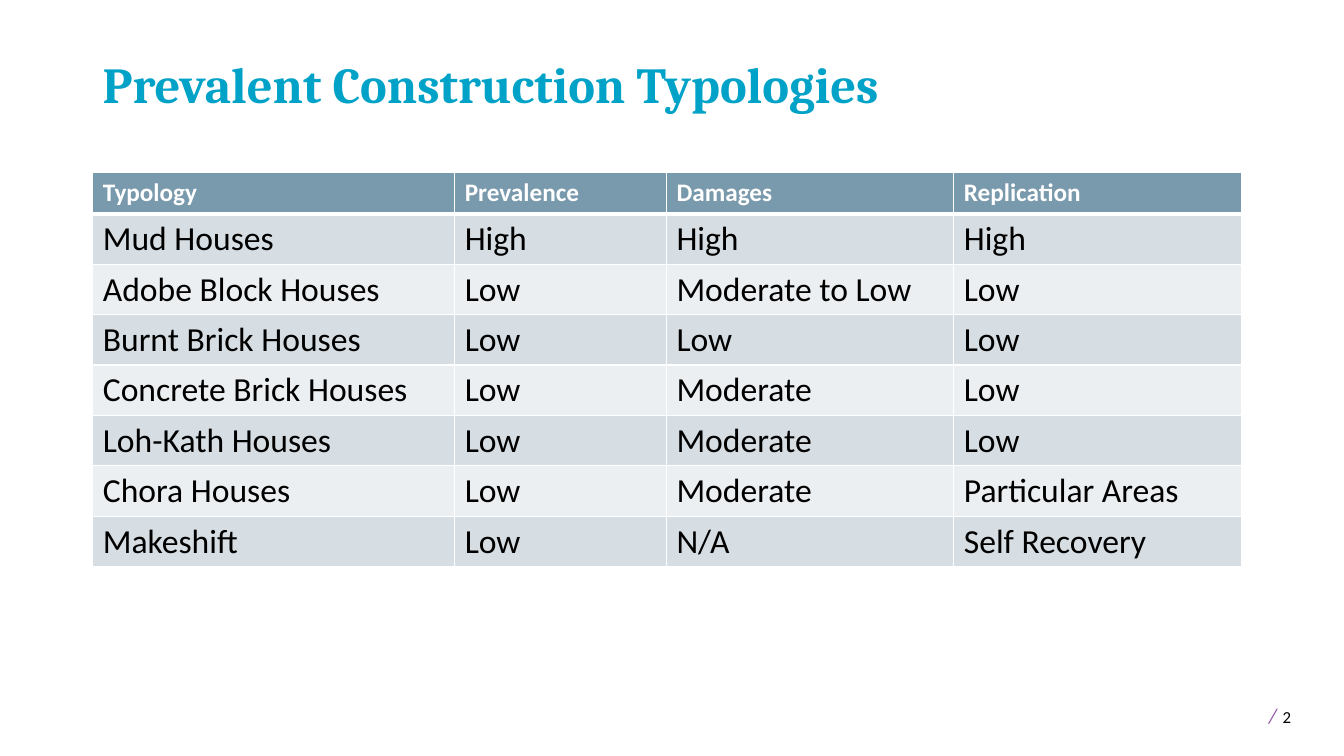
from lxml import etree
from pptx import Presentation
from pptx.dml.color import RGBColor
from pptx.enum.text import MSO_ANCHOR as Anchor
from pptx.oxml.ns import qn
from pptx.util import Inches, Pt

HEADER_FILL = "7999AC"
BAND_FILLS = ("D7DEE3", "ECEFF1")
COLUMN_WIDTHS = (3.59, 2.1, 2.85, 2.85)
HEADER_HEIGHT, BODY_HEIGHT = 0.41, 0.5

TYPOLOGIES = (
    ("Typology", "Prevalence", "Damages", "Replication"),
    ("Mud Houses", "High", "High", "High"),
    ("Adobe Block Houses", "Low", "Moderate to Low", "Low"),
    ("Burnt Brick Houses", "Low", "Low", "Low"),
    ("Concrete Brick Houses", "Low", "Moderate", "Low"),
    ("Loh-Kath Houses", "Low", "Moderate", "Low"),
    ("Chora Houses", "Low", "Moderate", "Particular Areas"),
    ("Makeshift", "Low", "N/A", "Self Recovery"),
)


def rgb(color):
    return RGBColor.from_string(color)


def add_run(p, text, size, color="000000", font="Calibri", bold=False, italic=False):
    r = p.add_run()
    r.text = text
    r.font.size = Pt(size)
    r.font.name = font
    r.font.bold = bold
    r.font.italic = italic
    r.font.color.rgb = rgb(color)


def add_text_box(s, left, top, width, height, anchor=Anchor.TOP):
    """Add a wrapping text box and return its first paragraph."""
    box = s.shapes.add_textbox(Inches(left), Inches(top), Inches(width), Inches(height))
    tf = box.text_frame
    tf.word_wrap = True
    tf.vertical_anchor = anchor
    return tf.paragraphs[0]


def set_borders(cell, top, bottom):
    """Draw white borders; they must precede the fill in the cell properties."""
    props = cell._tc.get_or_add_tcPr()
    widths = {"a:lnL": 1, "a:lnR": 1, "a:lnT": top, "a:lnB": bottom}
    for tag, width in widths.items():
        line = etree.SubElement(props, qn(tag), w=str(Pt(width)))
        fill = etree.SubElement(line, qn("a:solidFill"))
        etree.SubElement(fill, qn("a:srgbClr"), val="FFFFFF")


def fill_cell(cell, text, row):
    is_header = row == 0
    set_borders(cell, top=3 if row == 1 else 1, bottom=3 if is_header else 1)
    cell.fill.solid()
    cell.fill.fore_color.rgb = rgb(HEADER_FILL if is_header else BAND_FILLS[(row - 1) % 2])
    p = cell.text_frame.paragraphs[0]
    if is_header:
        add_run(p, text, 18, "FFFFFF", bold=True)
    else:
        add_run(p, text, 24)


def add_typology_table(s, left, top):
    height = HEADER_HEIGHT + BODY_HEIGHT * (len(TYPOLOGIES) - 1)
    table = s.shapes.add_table(
        len(TYPOLOGIES), len(COLUMN_WIDTHS), Inches(left), Inches(top),
        Inches(sum(COLUMN_WIDTHS)), Inches(height)).table
    for column, width in zip(table.columns, COLUMN_WIDTHS):
        column.width = Inches(width)
    for i, values in enumerate(TYPOLOGIES):
        table.rows[i].height = Inches(BODY_HEIGHT if i else HEADER_HEIGHT)
        for j, text in enumerate(values):
            fill_cell(table.cell(i, j), text, i)


def main():
    prs = Presentation()
    prs.slide_width, prs.slide_height = Inches(13.33), Inches(7.5)
    s = prs.slides.add_slide(prs.slide_layouts[6])

    # Page number
    p = add_text_box(s, 12.43, 6.88, 0.87, 0.4)
    add_run(p, " ", 18)
    add_run(p, "/", 15, "9053A1", italic=True)
    add_run(p, " ", 18)
    add_run(p, "2", 12)

    # Title
    p = add_text_box(s, 0.92, 0.4, 11.5, 0.78, Anchor.BOTTOM)
    p.line_spacing = 0.9
    add_run(p, "Prevalent Construction Typologies", 36, "00A2C7", "Cambria", bold=True)

    # Typology table
    add_typology_table(s, 0.92, 1.71)

    prs.save("out.pptx")


if __name__ == "__main__":
    main()
